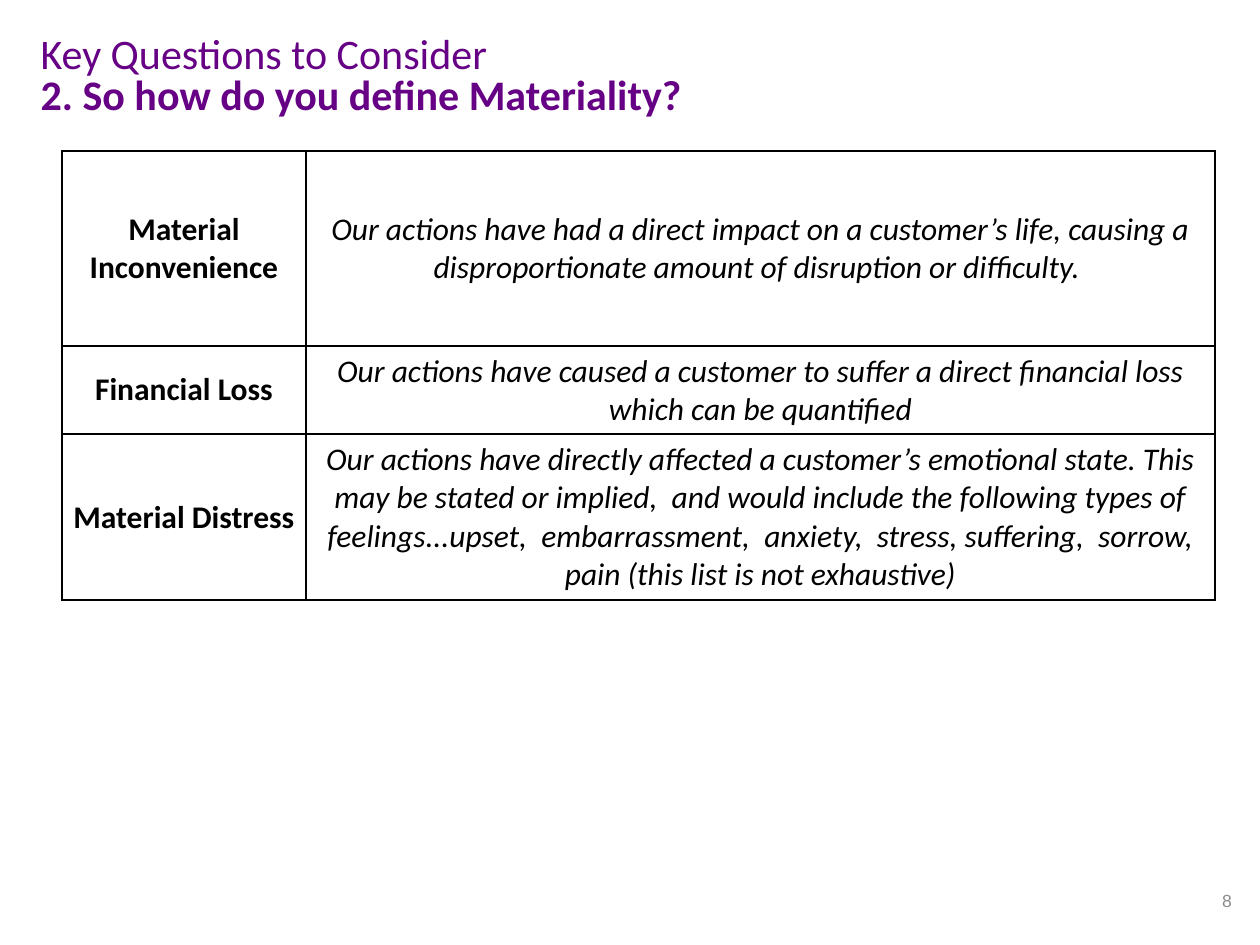
from lxml.etree import SubElement
from pptx import Presentation
from pptx.dml.color import RGBColor
from pptx.enum.text import MSO_ANCHOR as Anchor, MSO_AUTO_SIZE as AutoSize, PP_ALIGN as Align
from pptx.oxml.ns import qn
from pptx.util import Emu, Pt

PX = 914400 / 126
PURPLE, GREY, BLACK = "660085", "8C8C8C", "000000"
COLUMN_WIDTHS = (244, 909)
ROW_HEIGHTS = (195, 88, 166)
DEFINITIONS = (
    ("Material Inconvenience",
     "Our actions have had a direct impact on a customer’s life, causing a "
     "disproportionate amount of disruption or difficulty. "),
    ("Financial Loss",
     "Our actions have caused a customer to suffer a direct financial loss "
     "which can be quantified"),
    ("Material Distress",
     "Our actions have directly affected a customer’s emotional state. This may be "
     "stated or implied,  and would include the following types of feelings...upset,  "
     "embarrassment,  anxiety,  stress, suffering,  sorrow, pain (this list is not exhaustive)"),
)


def px(length):
    """Turn pixels into EMU."""
    return Emu(round(length * PX))


def rgb(colour):
    """Turn a hex string into a colour."""
    return RGBColor.from_string(colour)


def add_run(paragraph, text, size, colour, font="Calibri", bold=False, italic=False):
    """Append one formatted run to a paragraph."""
    run = paragraph.add_run()
    run.text = text
    run.font.name, run.font.size = font, Pt(size)
    run.font.bold, run.font.italic = bold, italic
    run.font.color.rgb = rgb(colour)


def add_heading(slide):
    """Place the two-line title in its placeholder."""
    title = slide.shapes.title
    title.left, title.top, title.width, title.height = map(px, (28, 20, 1178, 116))
    frame = title.text_frame
    frame.auto_size = AutoSize.NONE
    frame.vertical_anchor = Anchor.MIDDLE
    topic, question = frame.paragraphs[0], frame.add_paragraph()
    for line in (topic, question):
        line.alignment = Align.LEFT
        line.line_spacing = 0.8
    add_run(topic, "Key Questions to Consider", 24, PURPLE)
    add_run(question, "2. So how do you define Materiality?", 24, PURPLE, bold=True)


def add_page_number(slide):
    """Write the page number at the lower right."""
    box = slide.shapes.add_textbox(*map(px, (950, 876, 294, 50)))
    frame = box.text_frame
    frame.word_wrap = True
    frame.vertical_anchor = Anchor.MIDDLE
    number = frame.paragraphs[0]
    number.alignment = Align.RIGHT
    add_run(number, "8", 10, GREY, font="Arial")


def set_borders(cell, colour, width):
    """Draw a solid line on all four sides of a cell."""
    properties = cell._tc.get_or_add_tcPr()
    for side in ("a:lnL", "a:lnR", "a:lnT", "a:lnB"):
        line = SubElement(properties, qn(side), w=str(Pt(width)))
        fill = SubElement(line, qn("a:solidFill"))
        SubElement(fill, qn("a:srgbClr"), val=colour)


def fill_cell(cell, text, **style):
    """Format a cell and write its centred text."""
    cell.vertical_anchor = Anchor.MIDDLE
    set_borders(cell, BLACK, 1)
    cell.fill.background()
    paragraph = cell.text_frame.paragraphs[0]
    paragraph.alignment = Align.CENTER
    add_run(paragraph, text, 18, BLACK, **style)


def add_definitions(slide):
    """Build the table of terms and their meanings."""
    table = slide.shapes.add_table(
        len(DEFINITIONS), len(COLUMN_WIDTHS), px(62), px(151),
        px(sum(COLUMN_WIDTHS)), px(sum(ROW_HEIGHTS))).table
    table.first_row = table.horz_banding = False
    for column, width in zip(table.columns, COLUMN_WIDTHS):
        column.width = px(width)
    for row, height, (term, meaning) in zip(table.rows, ROW_HEIGHTS, DEFINITIONS):
        row.height = px(height)
        term_cell, meaning_cell = row.cells
        term_cell.margin_left = term_cell.margin_right = 0
        term_cell.margin_top = term_cell.margin_bottom = 0
        fill_cell(term_cell, term, bold=True)
        fill_cell(meaning_cell, meaning, italic=True)


def main():
    """Build and save the slide."""
    deck = Presentation()
    deck.slide_width, deck.slide_height = px(1260), px(945)
    slide = deck.slides.add_slide(deck.slide_layouts[5])
    add_heading(slide)
    add_page_number(slide)
    add_definitions(slide)
    deck.save("out.pptx")


if __name__ == "__main__":
    main()
